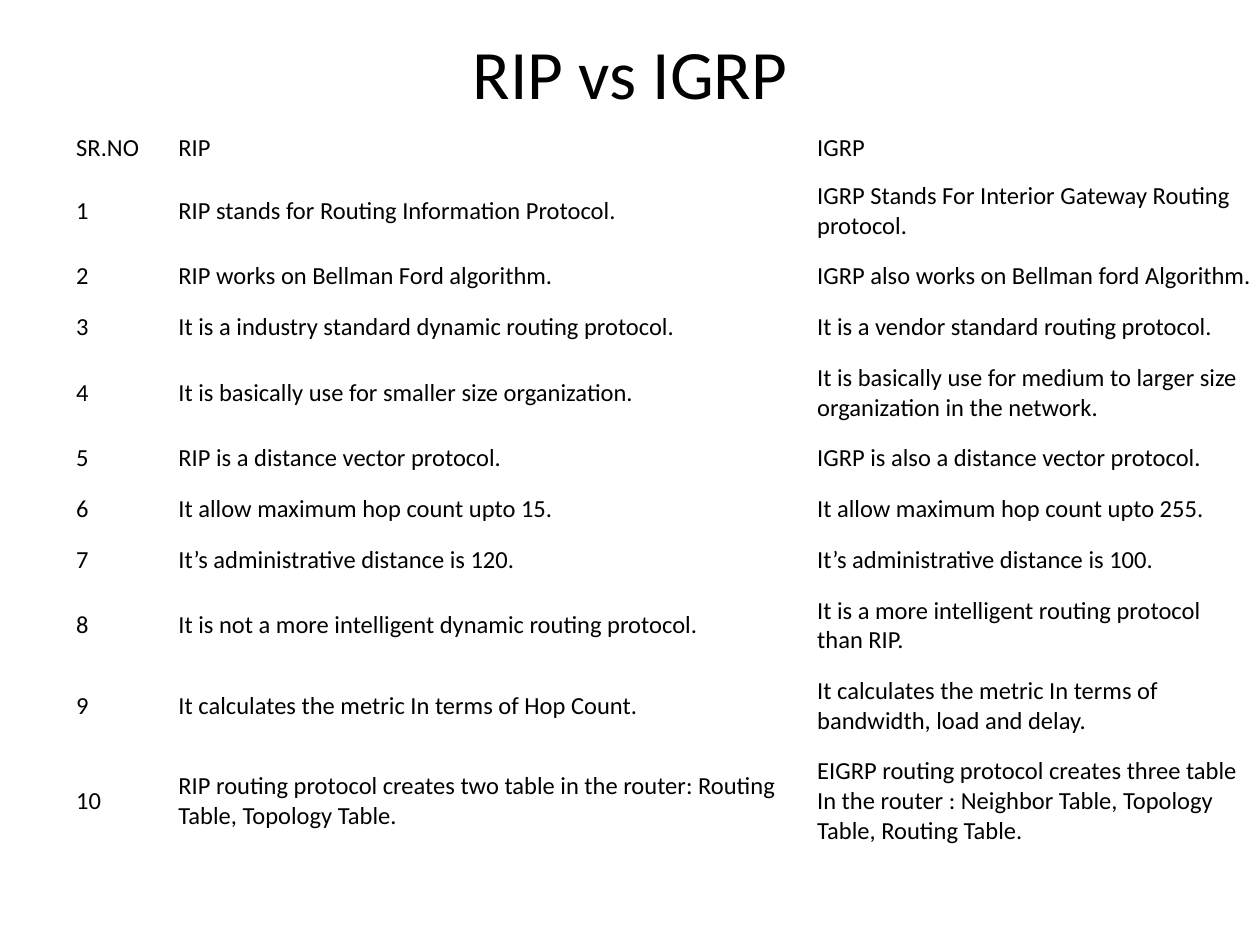
from dataclasses import dataclass

from pptx import Presentation
from pptx.dml.color import RGBColor
from pptx.enum.text import MSO_ANCHOR, PP_ALIGN
from pptx.util import Pt


@dataclass(frozen=True)
class Theme:
    font: str = "Calibri"
    ink: RGBColor = RGBColor(0x00, 0x00, 0x00)
    paper: RGBColor = RGBColor(0xFF, 0xFF, 0xFF)
    title_size: float = 39.6
    body_size: float = 14
    line_height: float = 17
    side_margin: float = 4.5
    header_margin: float = 4.5
    body_margin: float = 6


class SlideBuilder:
    def __init__(self, slide, theme):
        self.slide = slide
        self.theme = theme

    def style(self, paragraph, size):
        paragraph.font.name = self.theme.font
        paragraph.font.size = Pt(size)
        paragraph.font.color.rgb = self.theme.ink

    def title(self, wording, left, top, width, height):
        heading = self.slide.shapes.add_textbox(Pt(left), Pt(top), Pt(width), Pt(height))
        frame = heading.text_frame
        frame.word_wrap = True
        frame.vertical_anchor = MSO_ANCHOR.MIDDLE
        frame.text = wording
        frame.paragraphs[0].alignment = PP_ALIGN.CENTER
        self.style(frame.paragraphs[0], self.theme.title_size)

    def cell(self, cell, wording, vertical_margin):
        cell.fill.solid()
        cell.fill.fore_color.rgb = self.theme.paper
        cell.vertical_anchor = MSO_ANCHOR.MIDDLE
        cell.margin_left = cell.margin_right = Pt(self.theme.side_margin)
        cell.margin_top = cell.margin_bottom = Pt(vertical_margin)
        cell.text = wording
        self.style(cell.text_frame.paragraphs[0], self.theme.body_size)

    def table(self, header, entries, left, top, widths):
        rows = [(1, *header)]
        rows += [(lines, str(number), *pair) for number, (lines, *pair) in enumerate(entries, 1)]
        margins = [self.theme.header_margin] + [self.theme.body_margin] * len(entries)
        heights = [row[0] * self.theme.line_height + 2 * margin for row, margin in zip(rows, margins)]
        comparison = self.slide.shapes.add_table(
            len(rows), len(widths), Pt(left), Pt(top), Pt(sum(widths)), Pt(sum(heights))
        ).table
        comparison.first_row = False
        comparison.horz_banding = False
        for column, width in zip(comparison.columns, widths):
            column.width = Pt(width)
        for row, height, margin, (_, *wordings) in zip(comparison.rows, heights, margins, rows):
            row.height = Pt(height)
            for cell, wording in zip(row.cells, wordings):
                self.cell(cell, wording, margin)


HEADER = ("SR.NO", "RIP", "IGRP")
DIFFERENCES = [
    (2, "RIP stands for Routing Information Protocol.",
     "IGRP Stands For Interior Gateway Routing protocol."),
    (1, "RIP works on Bellman Ford algorithm.",
     "IGRP also works on Bellman ford Algorithm."),
    (1, "It is a industry standard dynamic routing protocol.",
     "It is a vendor standard routing protocol."),
    (2, "It is basically use for smaller size organization.",
     "It is basically use for medium to larger size organization in the network."),
    (1, "RIP is a distance vector protocol.",
     "IGRP is also a distance vector protocol."),
    (1, "It allow maximum hop count upto 15.",
     "It allow maximum hop count upto 255."),
    (1, "It’s administrative distance is 120.",
     "It’s administrative distance is 100."),
    (2, "It is not a more intelligent dynamic routing protocol.",
     "It is a more intelligent routing protocol than RIP."),
    (2, "It calculates the metric In terms of Hop Count.",
     "It calculates the metric In terms of bandwidth, load and delay."),
    (3, "RIP routing protocol creates two table in the router: Routing Table, Topology Table.",
     "EIGRP routing protocol creates three table In the router : "
     "Neighbor Table, Topology Table, Routing Table."),
]


def main():
    deck = Presentation()
    deck.slide_width, deck.slide_height = Pt(720), Pt(540)
    builder = SlideBuilder(deck.slides.add_slide(deck.slide_layouts[6]), Theme())
    builder.title("RIP vs IGRP", 36, 21.6, 648, 39)
    builder.table(HEADER, DIFFERENCES, 39, 71.5, (58.5, 365, 257.3))
    deck.save("out.pptx")


if __name__ == "__main__":
    main()
